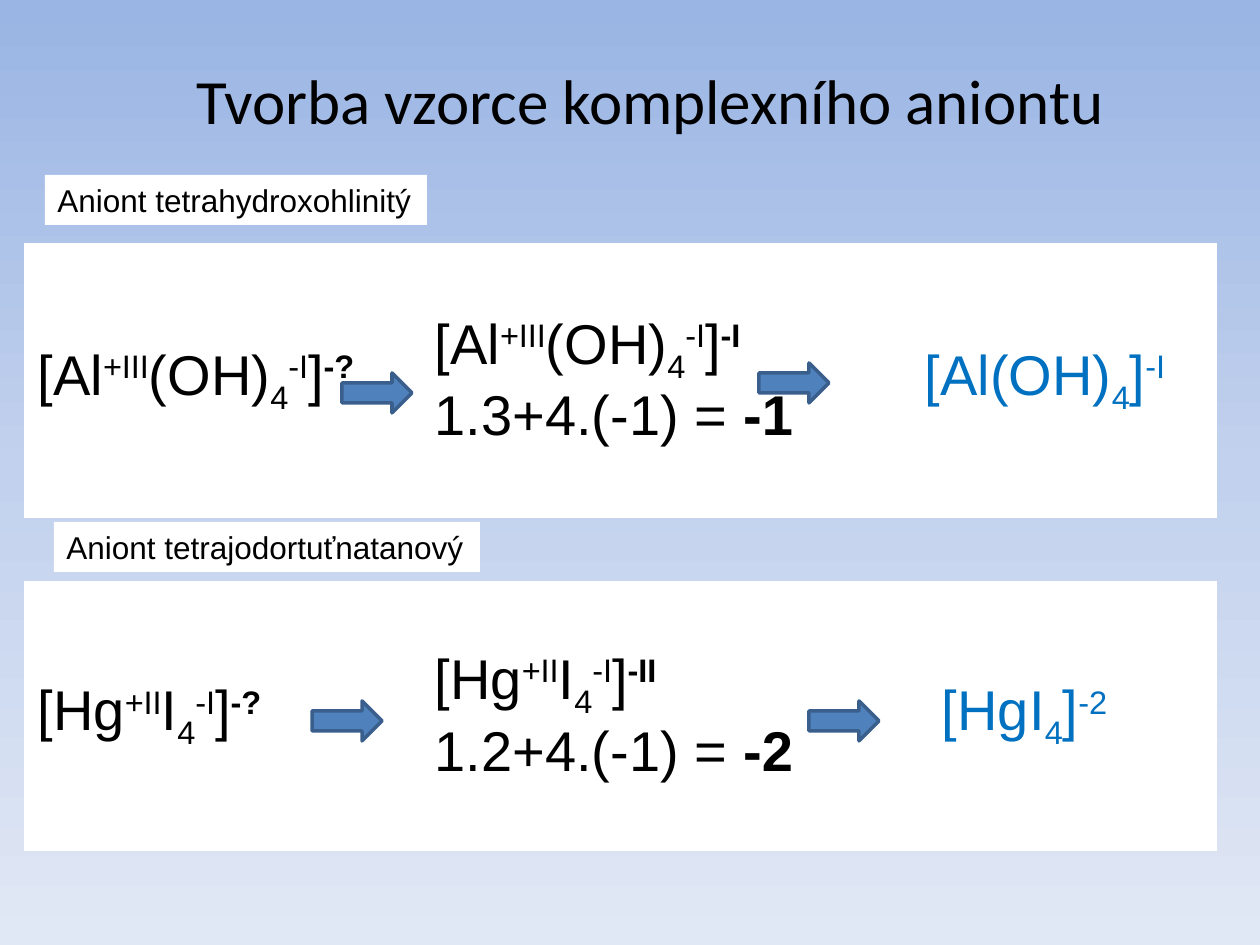
from copy import deepcopy

from pptx import Presentation
from pptx.dml.color import RGBColor
from pptx.enum.shapes import MSO_SHAPE as Shape
from pptx.enum.text import MSO_ANCHOR as Anchor, MSO_AUTO_SIZE as AutoSize, PP_ALIGN as Align
from pptx.oxml.ns import qn
from pptx.util import Pt

PX = 914400 / 126  # EMU per pixel

BLACK = RGBColor(0, 0, 0)
WHITE = RGBColor(0xFF, 0xFF, 0xFF)
RESULT_BLUE = RGBColor(0x00, 0x70, 0xC0)
ARROW_FILL = RGBColor(0x4F, 0x81, 0xBD)
ARROW_LINE = RGBColor(0x3A, 0x5F, 0x8C)
BACKGROUND_STOPS = [
    (0, RGBColor(0x9A, 0xB5, 0xE4)),
    (0.5, RGBColor(0xC2, 0xD1, 0xED)),
    (1, RGBColor(0xE1, 0xE8, 0xF5)),
]

TABLE_LEFT, COLUMN_WIDTH, COLUMN_COUNT = 25, 397, 3
ARROW_WIDTH, ARROW_HEIGHT = 70, 40
LABEL_HEIGHT = 50
UP, DOWN = 30000, -25000  # superscript and subscript baselines

LABEL_FRAME = {"word_wrap": False, "auto_size": AutoSize.SHAPE_TO_FIT_TEXT,
               "vertical_anchor": Anchor.MIDDLE}
TITLE_FRAME = {**LABEL_FRAME, "vertical_anchor": Anchor.TOP}
TITLE_FONT = {"name": "Calibri", "size": Pt(36), "bold": False}
LABEL_FONT = {"name": "Arial", "size": Pt(18)}
FORMULA_FONT = {"name": "Arial", "size": Pt(32)}

# Each formula run is (text, baseline, bold)
ALUMINATE = [("[Al", 0, False), ("+III", UP, False), ("(OH)", 0, False),
             ("4", DOWN, False), ("-I", UP, False), ("]", 0, False)]
MERCURATE = [("[Hg", 0, False), ("+II", UP, False), ("I", 0, False),
             ("4", DOWN, False), ("-I", UP, False), ("]", 0, False)]

EXAMPLES = [
    {"label": "Aniont tetrahydroxohlinitý", "label_box": (45, 175, 382),
     "top": 244, "height": 273, "ion": ALUMINATE, "charge": "-I",
     "sum": "1.3+4.(-1) =\u00a0", "total": "-1",
     "result": ("[Al(OH)", "-I"), "result_indent": 106,
     "arrows": [(342, 373), (759, 363)]},
    {"label": "Aniont tetrajodortuťnatanový", "label_box": (54, 522, 426),
     "top": 582, "height": 268, "ion": MERCURATE, "charge": "-II",
     "sum": "1.2+4.(-1) =\u00a0", "total": "-2",
     "result": ("[HgI", "-2"), "result_indent": 123,
     "arrows": [(312, 701), (809, 701)]},
]


def px(*lengths):
    return [round(length * PX) for length in lengths]


def apply_format(target, values):
    for name, value in values.items():
        setattr(target, name, value)


def write_runs(paragraph, runs, font_format, color=BLACK):
    for text, baseline, bold in runs:
        run = paragraph.add_run()
        run.text = text
        apply_format(run.font, {**font_format, "bold": bold})
        run.font.color.rgb = color
        if baseline:
            run.font._element.set("baseline", str(baseline))


def set_background(slide):
    fill = slide.background.fill
    fill.gradient()
    fill.gradient_angle = 270
    stop_list = slide._element.find(".//" + qn("a:gsLst"))
    stop_list.insert(1, deepcopy(stop_list[0]))
    for stop, (position, color) in zip(fill.gradient_stops, BACKGROUND_STOPS):
        stop.position = position
        stop.color.rgb = color


def set_title(slide, text):
    title = slide.shapes.title
    left, top, width, height = px(184, 55, 941, 90)
    apply_format(title, {"left": left, "top": top, "width": width, "height": height})
    apply_format(title.text_frame, TITLE_FRAME)
    paragraph = title.text_frame.paragraphs[0]
    paragraph.alignment = Align.LEFT
    write_runs(paragraph, [(text, 0, False)], TITLE_FONT)


def add_filled_shape(slide, kind, box, color):
    shape = slide.shapes.add_shape(kind, *px(*box))
    shape.shadow.inherit = False
    shape.fill.solid()
    shape.fill.fore_color.rgb = color
    return shape


def add_label(slide, text, left, top, width):
    label = add_filled_shape(slide, Shape.RECTANGLE, (left, top, width, LABEL_HEIGHT), WHITE)
    label.line.fill.background()
    apply_format(label.text_frame, LABEL_FRAME)
    paragraph = label.text_frame.paragraphs[0]
    paragraph.alignment = Align.LEFT
    write_runs(paragraph, [(text, 0, False)], LABEL_FONT)


def add_arrow(slide, left, top):
    arrow = add_filled_shape(slide, Shape.RIGHT_ARROW,
                             (left, top, ARROW_WIDTH, ARROW_HEIGHT), ARROW_FILL)
    arrow.line.color.rgb = ARROW_LINE
    arrow.line.width = Pt(2)


def add_formula_table(slide, example):
    box = px(TABLE_LEFT, example["top"], COLUMN_WIDTH * COLUMN_COUNT, example["height"])
    table = slide.shapes.add_table(1, COLUMN_COUNT, *box).table
    apply_format(table, {"first_row": False, "horz_banding": False})
    for cell in table.iter_cells():
        cell.fill.solid()
        cell.fill.fore_color.rgb = WHITE
        cell.vertical_anchor = Anchor.MIDDLE
    question, calculation, result = [
        cell.text_frame.paragraphs[0] for cell in table.iter_cells()]

    # Unknown charge
    write_runs(question, example["ion"] + [("-?", UP, True)], FORMULA_FONT)

    # Charge and its calculation
    write_runs(calculation, example["ion"] + [(example["charge"], UP, True)], FORMULA_FONT)
    calculation.add_line_break()
    write_runs(calculation, [(example["sum"], 0, False), (example["total"], 0, True)],
               FORMULA_FONT)

    # Finished formula
    table.cell(0, 2).margin_left = px(example["result_indent"])[0]
    core, charge = example["result"]
    write_runs(result, [(core, 0, False), ("4", DOWN, False), ("]", 0, False),
                        (charge, UP, False)], FORMULA_FONT, RESULT_BLUE)


def main():
    presentation = Presentation()
    presentation.slide_width, presentation.slide_height = px(1260, 945)
    slide = presentation.slides.add_slide(presentation.slide_layouts[5])
    set_background(slide)
    set_title(slide, "Tvorba vzorce komplexního aniontu")
    for example in EXAMPLES:
        add_formula_table(slide, example)
        add_label(slide, example["label"], *example["label_box"])
        for left, top in example["arrows"]:
            add_arrow(slide, left, top)
    presentation.save("out.pptx")


if __name__ == "__main__":
    main()
